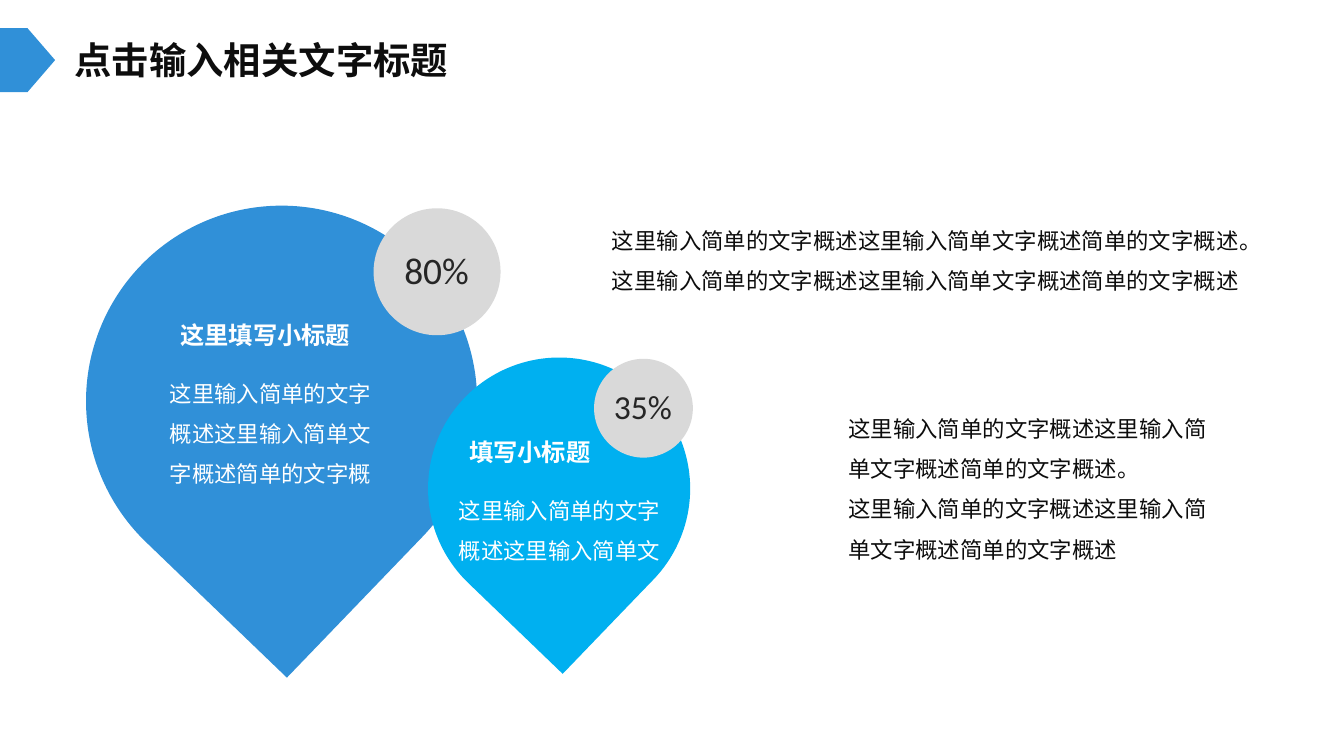
"""Build a slide with two rated teardrops and their notes."""
from dataclasses import dataclass

from lxml.etree import SubElement
from pptx import Presentation
from pptx.dml.color import RGBColor
from pptx.enum.shapes import MSO_SHAPE
from pptx.enum.text import MSO_AUTO_SIZE, PP_ALIGN
from pptx.oxml.ns import qn
from pptx.util import Inches, Length, Pt


@dataclass(frozen=True)
class Theme:
    blue: str = "3090D8"
    cyan: str = "00B0F0"
    grey: str = "D9D9D9"
    white: str = "FFFFFF"
    ink: str = "0D0D0D"
    dark: str = "262626"
    latin: str = "Calibri"
    han: str = "Noto Sans CJK SC"
    head: int = 20
    rate: int = 18
    label: int = 13
    body: int = 12


@dataclass(frozen=True)
class Box:
    col: float
    row: float
    cols: float
    rows: float


@dataclass(frozen=True)
class Look:
    size: int
    color: str
    face: str
    bold: bool = False
    pad: tuple = (1.33, 0.67)
    wrap: bool = True
    align: PP_ALIGN | None = None
    space: float | Length | None = None


@dataclass(frozen=True)
class Form:
    kind: MSO_SHAPE
    box: Box
    color: str
    turn: float = 0


@dataclass(frozen=True)
class Text:
    box: Box
    look: Look
    lines: tuple


THEME = Theme()
COLS, ROWS = 100, 56.25
CELL = Inches(10) / COLS
STOP = "。"
TITLE = Look(THEME.head, THEME.ink, THEME.han, True, (1, 0.5), False)
HIGH = Look(THEME.head, THEME.dark, THEME.latin, pad=(1, 0.5), wrap=False)
LOW = Look(THEME.rate, THEME.dark, THEME.latin, pad=(1, 0.5), wrap=False)
LABEL = Look(THEME.label, THEME.white, THEME.han, True,
             align=PP_ALIGN.JUSTIFY, space=Pt(16))
BODY = Look(THEME.body, THEME.white, THEME.latin, space=1.5)
NOTE = Look(THEME.body, THEME.ink, THEME.latin, space=1.5)

BRIEF = ("这里输入简单的文字", "概述这里输入简单文", "字概述简单的文字概")
LONG = "这里输入简单的文字概述这里输入简单文字概述简单的文字概述"
NOTES = (LONG + STOP, LONG)

FORMS = (
    Form(MSO_SHAPE.PENTAGON, Box(0, 2.1, 4.1, 4.75), THEME.blue),
    Form(MSO_SHAPE.TEAR, Box(6.4, 15.3, 29.1, 29.1), THEME.blue, 133.9),
    Form(MSO_SHAPE.TEAR, Box(31.85, 26.6, 19.5, 19.5), THEME.cyan, 133.9),
    Form(MSO_SHAPE.OVAL, Box(27.8, 15.5, 9.45, 9.45), THEME.grey),
    Form(MSO_SHAPE.OVAL, Box(44.2, 26.7, 7.35, 7.35), THEME.grey),
)
TEXTS = (
    Text(Box(4.55, 2.3, 30.1, 4.4), TITLE, ("点击输入相关文字标题",)),
    Text(Box(29.1, 17.9, 6.9, 4.4), HIGH, ("80%",)),
    Text(Box(44.7, 28.2, 6.4, 4), LOW, ("35%",)),
    Text(Box(11.3, 26.6, 18.8, 10.4), BODY, BRIEF),
    Text(Box(12.1, 23.1, 15.7, 3.6), LABEL, ("这里填写小标题",)),
    Text(Box(32.8, 35.3, 18.8, 7.4), BODY, BRIEF[:2]),
    Text(Box(33.6, 31.8, 15.7, 3.6), LABEL, ("填写小标题",)),
    Text(Box(44.2, 15.2, 52.2, 7.4), NOTE, NOTES),
    Text(Box(61.8, 29.2, 30.95, 13.5), NOTE, NOTES),
)


def span(count: float) -> Length:
    """Turn a count of grid cells into a length."""
    return Length(round(count * CELL))


def place(box: Box) -> tuple:
    """Give left, top, width and height of a box."""
    return tuple(span(n) for n in (box.col, box.row, box.cols, box.rows))


def apply(item, values: dict) -> None:
    """Set each named value on an item."""
    for name, value in values.items():
        setattr(item, name, value)


def draw(shapes, form: Form) -> None:
    """Draw one plain filled shape."""
    shape = shapes.add_shape(form.kind, *place(form.box))
    shape.rotation = form.turn
    shape.shadow.inherit = False
    shape.fill.solid()
    shape.fill.fore_color.rgb = RGBColor.from_string(form.color)
    shape.line.fill.background()


def add_run(para, words: str, face: str, look: Look) -> None:
    """Add a run of words in one face."""
    run = para.add_run()
    run.text = words
    apply(run.font, {"size": Pt(look.size), "bold": look.bold, "name": face})
    run.font.color.rgb = RGBColor.from_string(look.color)
    SubElement(run.font._element, qn("a:ea"), typeface=THEME.han)


def write(shapes, text: Text) -> None:
    """Write the lines of one text box."""
    look = text.look
    frame = shapes.add_textbox(*place(text.box)).text_frame
    side, edge = map(span, look.pad)
    apply(frame, {
        "word_wrap": look.wrap, "auto_size": MSO_AUTO_SIZE.SHAPE_TO_FIT_TEXT,
        "margin_left": side, "margin_right": side,
        "margin_top": edge, "margin_bottom": edge,
    })
    for index, line in enumerate(text.lines):
        para = frame.add_paragraph() if index else frame.paragraphs[0]
        apply(para, {"alignment": look.align, "line_spacing": look.space})
        for words, face in zip(line.partition(STOP), (look.face, THEME.han)):
            if words:
                add_run(para, words, face, look)


def main() -> None:
    """Build and save the slide."""
    deck = Presentation()
    apply(deck, {"slide_width": span(COLS), "slide_height": span(ROWS)})
    shapes = deck.slides.add_slide(deck.slide_layouts[6]).shapes
    for form in FORMS:
        draw(shapes, form)
    for text in TEXTS:
        write(shapes, text)
    deck.save("out.pptx")


if __name__ == "__main__":
    main()
